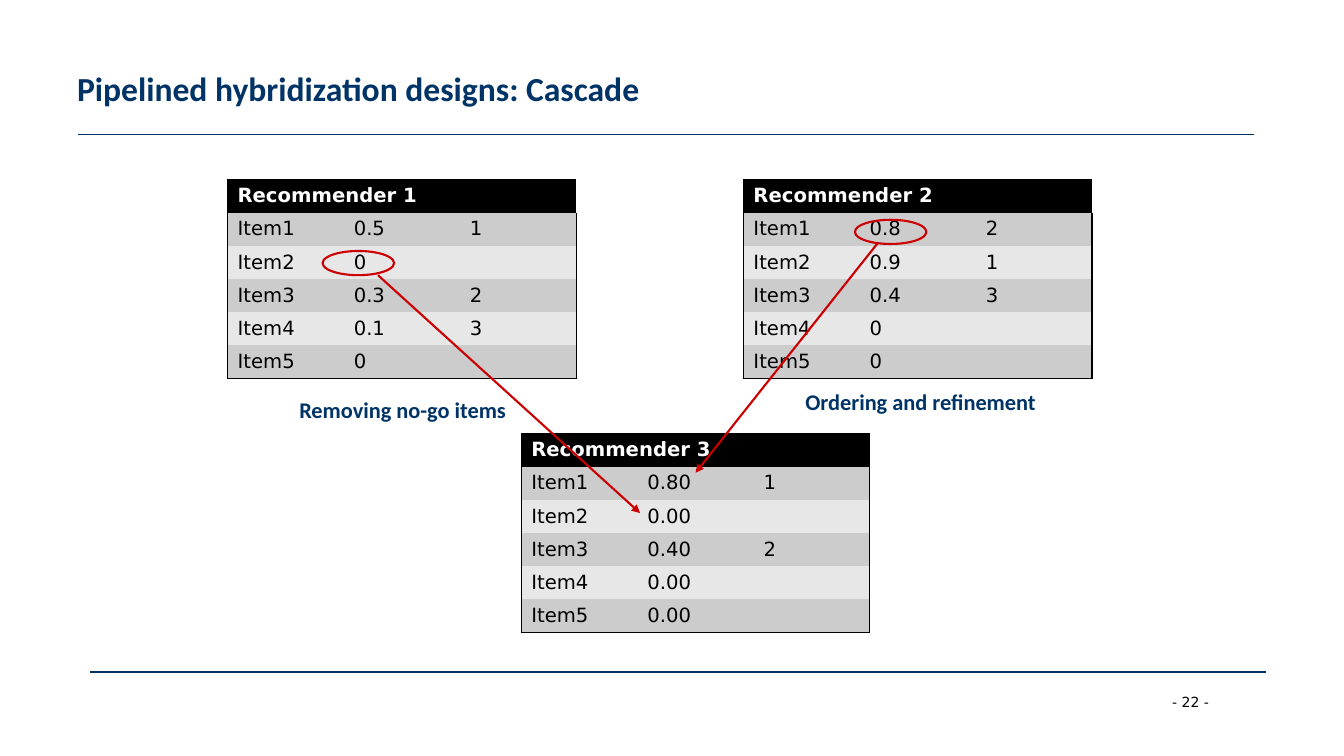
"""Build a slide on cascade hybridization with three recommender tables."""
from lxml import etree
from pptx import Presentation
from pptx.dml.color import RGBColor
from pptx.enum.shapes import MSO_CONNECTOR, MSO_SHAPE
from pptx.enum.text import MSO_ANCHOR
from pptx.oxml.ns import qn
from pptx.util import Pt

STRAIGHT = MSO_CONNECTOR.STRAIGHT
OVAL = MSO_SHAPE.OVAL
MIDDLE = MSO_ANCHOR.MIDDLE
TOP = MSO_ANCHOR.TOP
COLORS = {
    "navy": "003366",
    "red": "CC0000",
    "black": "000000",
    "white": "FFFFFF",
    "dark band": "CCCCCC",
    "light band": "E7E7E7",
}
NO_STYLE = "{2D5ABB26-0587-4C30-8999-92F81FD0307C}"
COLUMN_WIDTH = 83
ROW_HEIGHT = 23.6

presentation = Presentation()
presentation.slide_width = Pt(960)
presentation.slide_height = Pt(540)
slide = presentation.slides.add_slide(presentation.slide_layouts[6])


def set_font(paragraph, name, size, color, bold):
    paragraph.font.name = name
    paragraph.font.size = Pt(size)
    paragraph.font.bold = bold
    paragraph.font.color.rgb = RGBColor.from_string(COLORS[color])


def add_line(start, end, color, width):
    line = slide.shapes.add_connector(STRAIGHT, *map(Pt, start + end))
    line.line.color.rgb = RGBColor.from_string(COLORS[color])
    line.line.width = Pt(width)
    etree.SubElement(line._element.spPr, qn("a:effectLst"))
    return line


for start, end in [((56, 96), (896, 96)), ((64, 480), (904, 480))]:
    add_line(start, end, "navy", 0.75)

tables = [
    ("Recommender 1", 162.5, 128.2,
     [("0.5", "1"), ("0", ""), ("0.3", "2"), ("0.1", "3"), ("0", "")]),
    ("Recommender 2", 531, 128.2,
     [("0.8", "2"), ("0.9", "1"), ("0.4", "3"), ("0", ""), ("0", "")]),
    ("Recommender 3", 372.3, 309.6,
     [("0.80", "1"), ("0.00", ""), ("0.40", "2"), ("0.00", ""), ("0.00", "")]),
]
for heading, left, top, scores in tables:
    rows = [(heading, "", "")]
    rows += [(f"Item{number}", *score) for number, score in enumerate(scores, 1)]
    frame = slide.shapes.add_table(
        len(rows), 3, Pt(left), Pt(top), Pt(3 * COLUMN_WIDTH), Pt(len(rows) * ROW_HEIGHT))
    table = frame.table
    table._tbl.tblPr.find(qn("a:tableStyleId")).text = NO_STYLE
    for column in table.columns:
        column.width = Pt(COLUMN_WIDTH)
    for row_index, values in enumerate(rows):
        table.rows[row_index].height = Pt(ROW_HEIGHT)
        is_header = row_index == 0
        band = "black" if is_header else "dark band" if row_index % 2 else "light band"
        for column_index, value in enumerate(values):
            cell = table.cell(row_index, column_index)
            cell.text = value
            set_font(cell.text_frame.paragraphs[0], "DejaVu Sans", 14,
                     "white" if is_header else "black", is_header)
            cell.fill.solid()
            cell.fill.fore_color.rgb = RGBColor.from_string(COLORS[band])
            outer_edges = [
                ("a:lnL", column_index == 0),
                ("a:lnR", column_index == 2),
                ("a:lnT", is_header),
                ("a:lnB", row_index == len(rows) - 1),
            ]
            edges = [edge for edge, is_outer in outer_edges if is_outer]
            for position, edge in enumerate(edges):
                border = etree.Element(qn(edge), w=str(Pt(1)))
                fill = etree.SubElement(border, qn("a:solidFill"))
                etree.SubElement(fill, qn("a:srgbClr"), val=COLORS["black"])
                cell._tc.get_or_add_tcPr().insert(position, border)
    table.cell(0, 0).merge(table.cell(0, 2))

for start, end in [((270, 196.6), (457.2, 366.5)), ((627.1, 173.5), (496.8, 337.7))]:
    arrow = add_line(start, end, "red", 1.5)
    etree.SubElement(arrow.line._get_or_add_ln(), qn("a:tailEnd"), type="triangle")

for left, top in [(610.6, 157), (230.4, 179.3)]:
    ring = slide.shapes.add_shape(OVAL, Pt(left), Pt(top), Pt(51.1), Pt(17.3))
    ring.shadow.inherit = False
    ring.fill.background()
    ring.line.color.rgb = RGBColor.from_string(COLORS["red"])
    ring.line.width = Pt(1.5)

texts = [
    ("Pipelined hybridization designs: Cascade", (48, 18, 864, 90),
     7.2, MIDDLE, ("Calibri", 24, "navy", True)),
    ("Removing no-go items", (170.6, 281.5, 221, 31),
     43.2, TOP, ("Calibri", 16, "navy", True)),
    ("Ordering and refinement", (532.1, 275.8, 257.8, 28),
     43.2, TOP, ("Calibri", 16, "navy", True)),
    ("- 22 -", (830.2, 491.8, 48.2, 19.4),
     7.2, TOP, ("DejaVu Sans", 10, "black", False)),
]
for text, box, indent, anchor, font in texts:
    text_frame = slide.shapes.add_textbox(*map(Pt, box)).text_frame
    text_frame.word_wrap = True
    text_frame.margin_left = Pt(indent)
    text_frame.vertical_anchor = anchor
    paragraph = text_frame.paragraphs[0]
    paragraph.text = text
    set_font(paragraph, *font)
    if font[1] == 16:
        paragraph.line_spacing = 0.9
        paragraph.space_before = Pt(3.2)

presentation.save("out.pptx")
